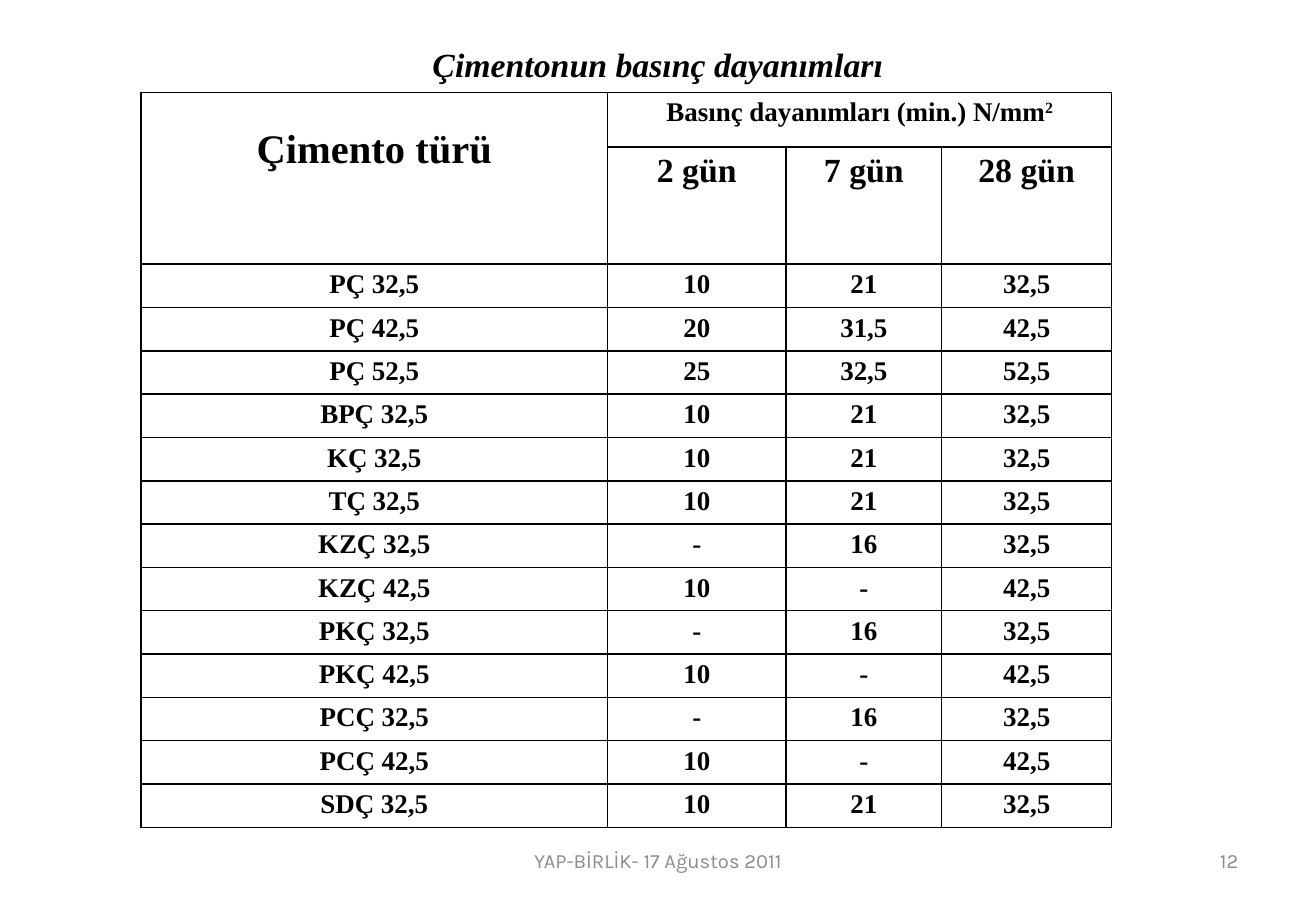
from lxml.etree import SubElement
from pptx import Presentation
from pptx.dml.color import RGBColor
from pptx.enum.text import MSO_ANCHOR as Anchor, PP_ALIGN as Align
from pptx.oxml.ns import qn
from pptx.util import Inches, Pt

SERIF, SANS = "Times New Roman", "Karla"
BLACK, GREY = "000000", "8C8C8C"

# Table content and grid, in percent of the slide's size
COLUMNS = [35.46, 13.57, 11.82, 12.93]
HEADER_ROWS, CEMENT_ROW = [6, 12.73], 4.63
AGES = ["2 gün", "7 gün", "28 gün"]
CEMENTS = [
    ("PÇ 32,5", "10", "21", "32,5"),
    ("PÇ 42,5", "20", "31,5", "42,5"),
    ("PÇ 52,5", "25", "32,5", "52,5"),
    ("BPÇ 32,5", "10", "21", "32,5"),
    ("KÇ 32,5", "10", "21", "32,5"),
    ("TÇ 32,5", "10", "21", "32,5"),
    ("KZÇ 32,5", "-", "16", "32,5"),
    ("KZÇ 42,5", "10", "-", "42,5"),
    ("PKÇ 32,5", "-", "16", "32,5"),
    ("PKÇ 42,5", "10", "-", "42,5"),
    ("PCÇ 32,5", "-", "16", "32,5"),
    ("PCÇ 42,5", "10", "-", "42,5"),
    ("SDÇ 32,5", "10", "21", "32,5"),
]


def color(value):
    return RGBColor.from_string(value)


class SlideBuilder:
    def __init__(self, deck):
        self.width, self.height = deck.slide_width, deck.slide_height
        self.slide = deck.slides.add_slide(deck.slide_layouts[6])

    def x(self, percent):
        return round(self.width * percent / 100)

    def y(self, percent):
        return round(self.height * percent / 100)

    def box(self, left, top, width, height):
        return self.x(left), self.y(top), self.x(width), self.y(height)

    def run(self, paragraph, text, size, font=SERIF, ink=BLACK, bold=True, italic=False):
        run = paragraph.add_run()
        run.text = text
        run.font.size, run.font.name = Pt(size), font
        run.font.bold, run.font.italic = bold, italic
        run.font.color.rgb = color(ink)
        return run

    def text(self, place, text, size, align=Align.CENTER, **style):
        frame = self.slide.shapes.add_textbox(*self.box(*place)).text_frame
        frame.word_wrap = True
        frame.vertical_anchor = Anchor.MIDDLE
        frame.paragraphs[0].alignment = align
        self.run(frame.paragraphs[0], text, size, **style)

    def table(self, left, top, columns, rows):
        place = self.box(left, top, sum(columns), sum(rows))
        table = self.slide.shapes.add_table(len(rows), len(columns), *place).table
        table.first_row = table.horz_banding = False
        for column, width in zip(table.columns, columns):
            column.width = self.x(width)
        for row, height in zip(table.rows, rows):
            row.height = self.y(height)
        for cell in table.iter_cells():
            self.frame_cell(cell)
        return table

    def frame_cell(self, cell):
        cell.margin_top = cell.margin_bottom = Inches(0.045)
        properties = cell._tc.get_or_add_tcPr()
        for side in ("a:lnL", "a:lnR", "a:lnT", "a:lnB"):
            line = SubElement(properties, qn(side), w=str(Pt(1)))
            fill = SubElement(line, qn("a:solidFill"))
            SubElement(fill, qn("a:srgbClr"), val=BLACK)
        cell.fill.background()

    def cell(self, cell, text, size, hanging=True):
        paragraph = cell.text_frame.paragraphs[0]
        paragraph.alignment = Align.CENTER
        if hanging:
            indent = Inches(0.38)
            properties = paragraph._p.get_or_add_pPr()
            properties.set("marL", str(indent))
            properties.set("indent", str(-indent))
        self.run(paragraph, text, size)
        return paragraph


def main():
    deck = Presentation()
    deck.slide_width, deck.slide_height = Inches(10.83), Inches(7.5)
    page = SlideBuilder(deck)

    # Title
    page.text((5, 4, 90, 6.13), "Çimentonun basınç dayanımları", 20, italic=True)

    # Strength table with a two-row header
    rows = HEADER_ROWS + [CEMENT_ROW] * len(CEMENTS)
    strengths = page.table(10.71, 10.13, COLUMNS, rows)
    cement_head, strength_head = strengths.cell(0, 0), strengths.cell(0, 1)
    cement_head.merge(strengths.cell(1, 0))
    strength_head.merge(strengths.cell(0, 3))

    page.cell(cement_head, "Çimento türü", 24, hanging=False)
    cement_head.vertical_anchor = Anchor.MIDDLE
    cement_head.margin_bottom = Inches(0.52)
    unit = page.cell(strength_head, "Basınç dayanımları (min.) N/mm", 16)
    square = page.run(unit, "2", 16)
    square.font._element.set("baseline", "30000")
    for column, age in enumerate(AGES, 1):
        page.cell(strengths.cell(1, column), age, 20)

    # Cement rows
    for row, cement in enumerate(CEMENTS, len(HEADER_ROWS)):
        for column, value in enumerate(cement):
            page.cell(strengths.cell(row, column), value, 16)

    # Footer and page number
    small = dict(font=SANS, ink=GREY, bold=False)
    page.text((34.17, 91.07, 31.67, 6.67), "YAP-BİRLİK- 17 Ağustos 2011", 12, **small)
    page.text((71.65, 91.07, 23.36, 6.67), "12", 12, Align.RIGHT, **small)

    deck.save("out.pptx")


if __name__ == "__main__":
    main()
